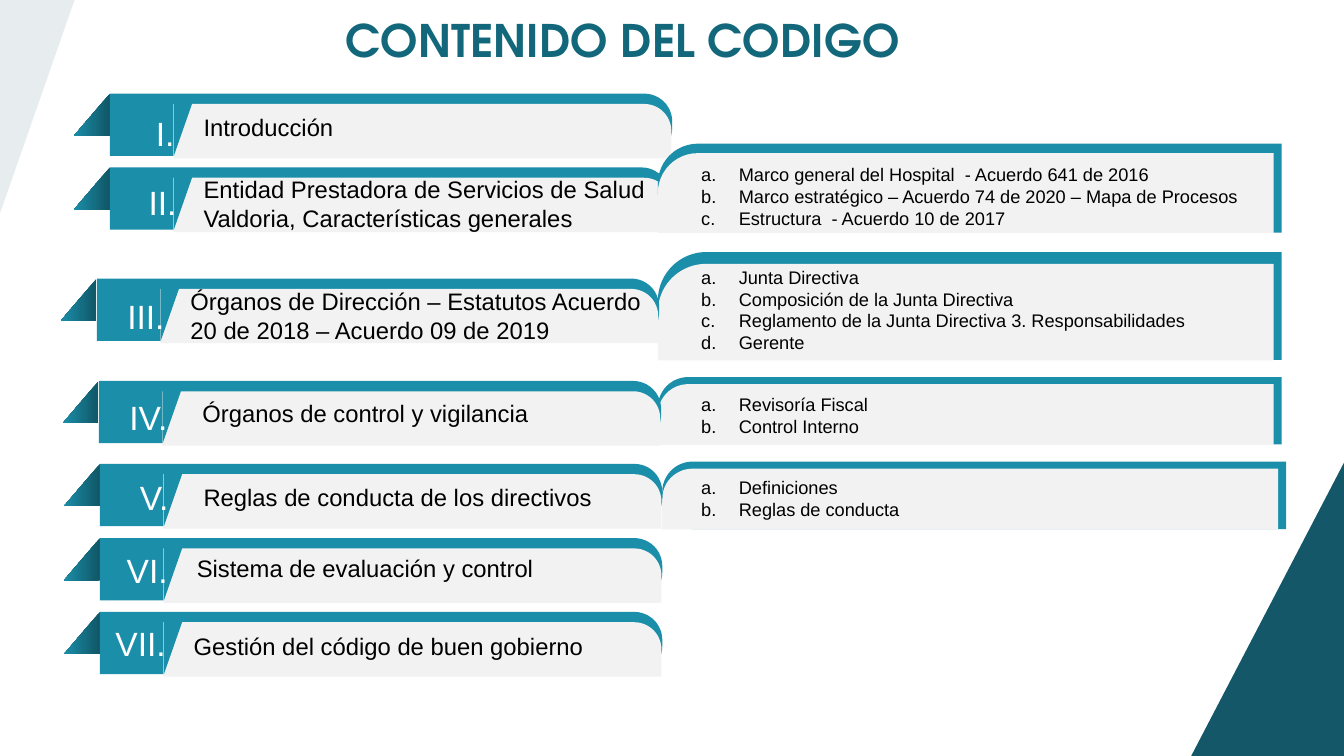
from lxml.etree import SubElement
from pptx import Presentation
from pptx.dml.color import RGBColor
from pptx.enum.shapes import MSO_SHAPE
from pptx.enum.text import MSO_ANCHOR, PP_ALIGN
from pptx.oxml.ns import qn
from pptx.util import Cm, Pt

TEAL, DARK_TEAL, CORNER, PANEL = "1B8EA9", "105666", "145768", "F2F2F2"
BLACK, WHITE, HEADING = "000000", "FFFFFF", "13677B"
FOLD_W, FOLD_H = 0.91, 1.07
RIBBON_H, PLATE_W, PLATE_H = 1.57, 12.55, 1.37
PANEL_W, PANEL_EDGE = 15.72, 0.2

# left, top, width, numeral (text, width, right, top), heading (text, left, top, width, height)
RIBBONS = [
    (2.77, 2.36, 14.17, ("I.", 0.99, 1.88, 0.36), ("Introducción", 2.11, 0.35, 7.75, 0.99)),
    (2.77, 4.22, 14.1, ("II.", 1.22, 1.93, 0.25),
     ("Entidad Prestadora de Servicios de Salud Valdoria, Características generales",
      2.11, 0.07, 11.99, 1.7)),
    (2.44, 7.02, 14.17, ("III.", 1.45, 1.96, 0.3),
     ("Órganos de Dirección – Estatutos Acuerdo 20 de 2018 – Acuerdo 09 de 2019",
      2.11, 0.09, 12.4, 1.7)),
    (2.49, 9.6, 14.17, ("IV.", 1.47, 1.98, 0.28),
     ("Órganos de control y vigilancia", 2.36, 0.31, 13.41, 0.99)),
    (2.52, 11.69, 14.17, ("V.", 1.24, 1.98, 0.2),
     ("Reglas de conducta de los directivos", 2.36, 0.35, 13.51, 0.99)),
    (2.52, 13.56, 14.17, ("VI.", 1.55, 1.96, 0.18),
     ("Sistema de evaluación y control", 2.19, 0.28, 10.8, 0.99)),
    (2.52, 15.42, 14.17, ("VII.", 1.8, 1.91, 0.15),
     ("Gestión del código de buen gobierno", 2.11, 0.37, 14.22, 0.99)),
]
# left, top, height, band, topics box, topics
LEGAL_PANEL = (16.58, 3.62, 2.24, 0.24, (17.42, 3.99, 14.99, 1.93),
               ["Marco general del Hospital  - Acuerdo 641 de 2016",
                "Marco estratégico – Acuerdo 74 de 2020 – Mapa de Procesos",
                "Estructura  - Acuerdo 10 de 2017"])
LOWER_PANELS = [
    (16.58, 9.5, 1.7, 0.18, (17.42, 9.78, 7.14, 1.37), ["Revisoría Fiscal", "Control Interno"]),
    (16.69, 11.63, 1.7, 0.18, (17.42, 11.89, 8.76, 1.37), ["Definiciones", "Reglas de conducta"]),
    (16.58, 6.35, 2.72, 0.3, (17.42, 6.58, 14.4, 2.49),
     ["Junta Directiva", "Composición de la Junta Directiva",
      "Reglamento de la Junta Directiva 3. Responsabilidades", "Gerente"]),
]


def color(value):
    """Turn a hex string into a colour."""
    return RGBColor.from_string(value)


def paint(shape, fill):
    """Give a shape a flat fill without line or shadow."""
    shape.shadow.inherit = False
    shape.line.fill.background()
    shape.fill.solid()
    shape.fill.fore_color.rgb = color(fill)
    return shape


def add_piece(slide, preset, box, fill, turn=0, mirror=False, adjust=()):
    """Draw a preset so that it fills the box after a quarter turn."""
    left, top, width, height = box
    if turn:
        left, top = left + (width - height) / 2, top + (height - width) / 2
        width, height = height, width
    piece = paint(slide.shapes.add_shape(preset, Cm(left), Cm(top), Cm(width), Cm(height)), fill)
    piece.rotation = turn
    for index, value in enumerate(adjust):
        piece.adjustments[index] = value
    if mirror:
        piece._element.spPr.find(qn("a:xfrm")).set("flipH", "1")
    return piece


def add_run(paragraph, text, size, ink, face="Arial", bold=False):
    """Append one formatted run."""
    run = paragraph.add_run()
    run.text = text
    run.font.size, run.font.name, run.font.bold = Pt(size), face, bold
    run.font.color.rgb = color(ink)


def add_text_frame(slide, box, wrap=True):
    """Place an empty text box and return its frame."""
    frame = slide.shapes.add_textbox(*map(Cm, box)).text_frame
    frame.word_wrap = wrap
    return frame


def add_corner(slide, points, opacity=None):
    """Draw a decorative corner triangle."""
    builder = slide.shapes.build_freeform(Cm(points[0][0]), Cm(points[0][1]))
    builder.add_line_segments([(Cm(x), Cm(y)) for x, y in points[1:]], close=True)
    corner = paint(builder.convert_to_shape(), CORNER)
    if opacity:
        tint = corner._element.spPr.find(qn("a:solidFill"))[0]
        SubElement(tint, qn("a:alpha")).set("val", str(opacity * 1000))


def add_heading(slide, box):
    """Fill and place the title."""
    title = slide.shapes.title
    title.left, title.top, title.width, title.height = map(Cm, box)
    frame = title.text_frame
    frame.word_wrap, frame.vertical_anchor = True, MSO_ANCHOR.TOP
    frame.paragraphs[0].alignment = PP_ALIGN.LEFT
    add_run(frame.paragraphs[0], "CONTENIDO DEL CODIGO", 32, HEADING, "TeX Gyre Adventor", True)


def add_ribbon(slide, left, top, width, numeral, heading):
    """Draw a folded ribbon with its numeral and chapter heading."""
    fold = add_piece(slide, MSO_SHAPE.RIGHT_TRIANGLE, (left - FOLD_W, top, FOLD_W, FOLD_H),
                     TEAL, mirror=True)
    fold.fill.gradient()
    fold.fill.gradient_angle = 0
    for stop, position, shade in zip(fold.fill.gradient_stops, (0, 1), (DARK_TEAL, TEAL)):
        stop.position, stop.color.rgb = position, color(shade)
    add_piece(slide, MSO_SHAPE.ROUND_2_SAME_RECTANGLE, (left, top, width, RIBBON_H),
              TEAL, turn=90, adjust=(0.449, 0))
    add_piece(slide, MSO_SHAPE.ROUND_1_RECTANGLE, (left + 1.6, top + 0.26, PLATE_W, PLATE_H),
              PANEL, adjust=(0.5,))
    add_piece(slide, MSO_SHAPE.RIGHT_TRIANGLE, (left + 1.61, top + 0.2, 0.48, PLATE_H),
              TEAL, turn=90)

    text, box_w, right, down = numeral
    mark = add_text_frame(slide, (left + right - box_w, top + down, box_w, 1.27), wrap=False)
    mark.paragraphs[0].alignment = PP_ALIGN.RIGHT
    add_run(mark.paragraphs[0], text, 24, WHITE)

    text, across, down, box_w, box_h = heading
    chapter = add_text_frame(slide, (left + across, top + down, box_w, box_h))
    add_run(chapter.paragraphs[0], text, 17, BLACK)


def add_panel(slide, left, top, height, band, topics_box, topics):
    """Draw a detail panel with its lettered topics."""
    add_piece(slide, MSO_SHAPE.ROUND_2_SAME_RECTANGLE, (left, top, PANEL_W, height),
              TEAL, turn=270, adjust=(0.449, 0))
    add_piece(slide, MSO_SHAPE.ROUND_1_RECTANGLE,
              (left, top + band, PANEL_W - PANEL_EDGE, height - band + 0.01),
              PANEL, mirror=True, adjust=(0.5,))
    frame = add_text_frame(slide, topics_box)
    for index, topic in enumerate(topics):
        paragraph = frame.add_paragraph() if index else frame.paragraphs[0]
        properties = paragraph._p.get_or_add_pPr()
        properties.set("marL", str(Cm(0.95)))
        properties.set("indent", str(-Cm(0.95)))
        SubElement(properties, qn("a:buFont")).set("typeface", "+mj-lt")
        SubElement(properties, qn("a:buAutoNum")).set("type", "alphaLcPeriod")
        add_run(paragraph, topic, 13, BLACK)


def main():
    """Build and save the contents slide."""
    deck = Presentation()
    deck.slide_width, deck.slide_height = Cm(33.87), Cm(19.05)
    slide = deck.slides.add_slide(deck.slide_layouts[5])
    add_corner(slide, [(33.87, 11.66), (33.87, 19.05), (30.02, 19.05)])
    add_corner(slide, [(0, 0), (1.88, 0), (0, 5.38)], opacity=10)
    add_heading(slide, (8.46, 0.2, 16.94, 1.63))
    for panel in LOWER_PANELS:
        add_panel(slide, *panel)
    for ribbon in RIBBONS:
        add_ribbon(slide, *ribbon)
    add_panel(slide, *LEGAL_PANEL)
    deck.save("out.pptx")


if __name__ == "__main__":
    main()
